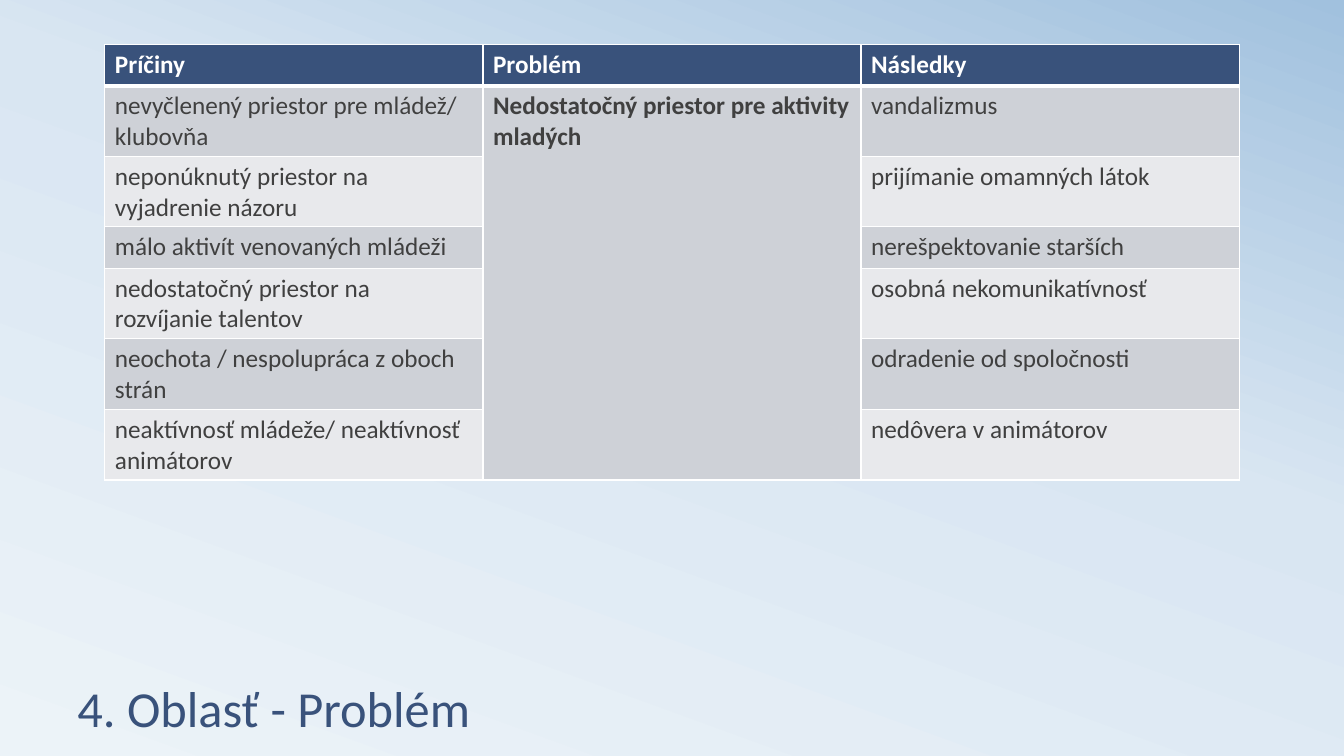
from copy import deepcopy

from lxml import etree
from pptx import Presentation
from pptx.dml.color import RGBColor
from pptx.enum import text
from pptx.oxml import ns
from pptx.util import Inches, Pt

NAVY = RGBColor(0x39, 0x52, 0x7B)
WHITE = RGBColor(0xFF, 0xFF, 0xFF)
CHARCOAL = RGBColor(0x40, 0x40, 0x40)
BAND_DARK = RGBColor(0xCE, 0xD1, 0xD7)
BAND_LIGHT = RGBColor(0xE8, 0xE9, 0xEC)
SKY = [
    (0, RGBColor(0xEC, 0xF3, 0xF8)),
    (0.58, RGBColor(0xD9, 0xE6, 0xF2)),
    (1, RGBColor(0xA1, 0xC1, 0xDE)),
]
FONT = "Calibri"

HEADINGS = ["Príčiny", "Problém", "Následky"]
PROBLEM = "Nedostatočný priestor pre aktivity mladých"
CAUSES_AND_EFFECTS = [
    ("nevyčlenený priestor pre mládež/ klubovňa", "vandalizmus"),
    ("neponúknutý priestor na vyjadrenie názoru", "prijímanie omamných látok"),
    ("málo aktivít venovaných mládeži", "nerešpektovanie starších"),
    ("nedostatočný priestor na rozvíjanie talentov", "osobná nekomunikatívnosť"),
    ("neochota / nespolupráca z oboch strán", "odradenie od spoločnosti"),
    ("neaktívnosť mládeže/ neaktívnosť animátorov", "nedôvera v animátorov"),
]


def paint_background(slide):
    fill = slide.background.fill
    fill.gradient()
    fill.gradient_angle = 70
    stop_list = slide.element.find(".//" + ns.qn("a:gsLst"))
    stop_list.append(deepcopy(stop_list[0]))
    for stop, (position, color) in zip(fill.gradient_stops, SKY):
        stop.position = position
        stop.color.rgb = color


def write(frame, wording, size, color, bold=False):
    frame.text = wording
    font = frame.paragraphs[0].runs[0].font
    font.name = FONT
    font.size = Pt(size)
    font.bold = bold
    font.color.rgb = color


def add_title(slide, wording):
    title = slide.shapes.add_textbox(Inches(0.67), Inches(6.19), Inches(12), Inches(1.17))
    frame = title.text_frame
    frame.word_wrap = True
    frame.vertical_anchor = text.MSO_ANCHOR.BOTTOM
    write(frame, wording, 36, NAVY)
    frame.paragraphs[0].line_spacing = 0.8


def set_borders(cell, top=1, bottom=1):
    properties = cell._tc.get_or_add_tcPr()
    widths = {"lnL": 1, "lnR": 1, "lnT": top, "lnB": bottom}
    for place, (side, width) in enumerate(widths.items()):
        line = etree.Element(ns.qn("a:" + side), w=str(Pt(width)))
        solid = etree.SubElement(line, ns.qn("a:solidFill"))
        etree.SubElement(solid, ns.qn("a:srgbClr"), val=str(WHITE))
        properties.insert(place, line)


def fill_cell(cell, wording, fill, color, bold=False, top=1, bottom=1):
    write(cell.text_frame, wording, 18, color, bold)
    cell.fill.solid()
    cell.fill.fore_color.rgb = fill
    set_borders(cell, top, bottom)


def add_problem_table(slide):
    row_count = len(CAUSES_AND_EFFECTS) + 1
    table = slide.shapes.add_table(
        row_count, len(HEADINGS), Inches(1.04), Inches(0.44),
        Inches(11.25), Inches(0.41 * row_count),
    ).table
    for column, heading in enumerate(HEADINGS):
        fill_cell(table.cell(0, column), heading, NAVY, WHITE, bold=True, bottom=3)
    for row, (cause, effect) in enumerate(CAUSES_AND_EFFECTS, start=1):
        band = BAND_DARK if row % 2 else BAND_LIGHT
        top = 3 if row == 1 else 1
        fill_cell(table.cell(row, 0), cause, band, CHARCOAL, top=top)
        fill_cell(table.cell(row, 2), effect, band, CHARCOAL, top=top)
    problem = table.cell(1, 1)
    problem.merge(table.cell(row_count - 1, 1))
    fill_cell(problem, PROBLEM, BAND_DARK, CHARCOAL, bold=True, top=3)


def main():
    deck = Presentation()
    deck.slide_width = Inches(13.33)
    deck.slide_height = Inches(7.5)
    slide = deck.slides.add_slide(deck.slide_layouts[6])
    paint_background(slide)
    add_title(slide, "4. Oblasť - Problém")
    add_problem_table(slide)
    deck.save("out.pptx")


if __name__ == "__main__":
    main()
